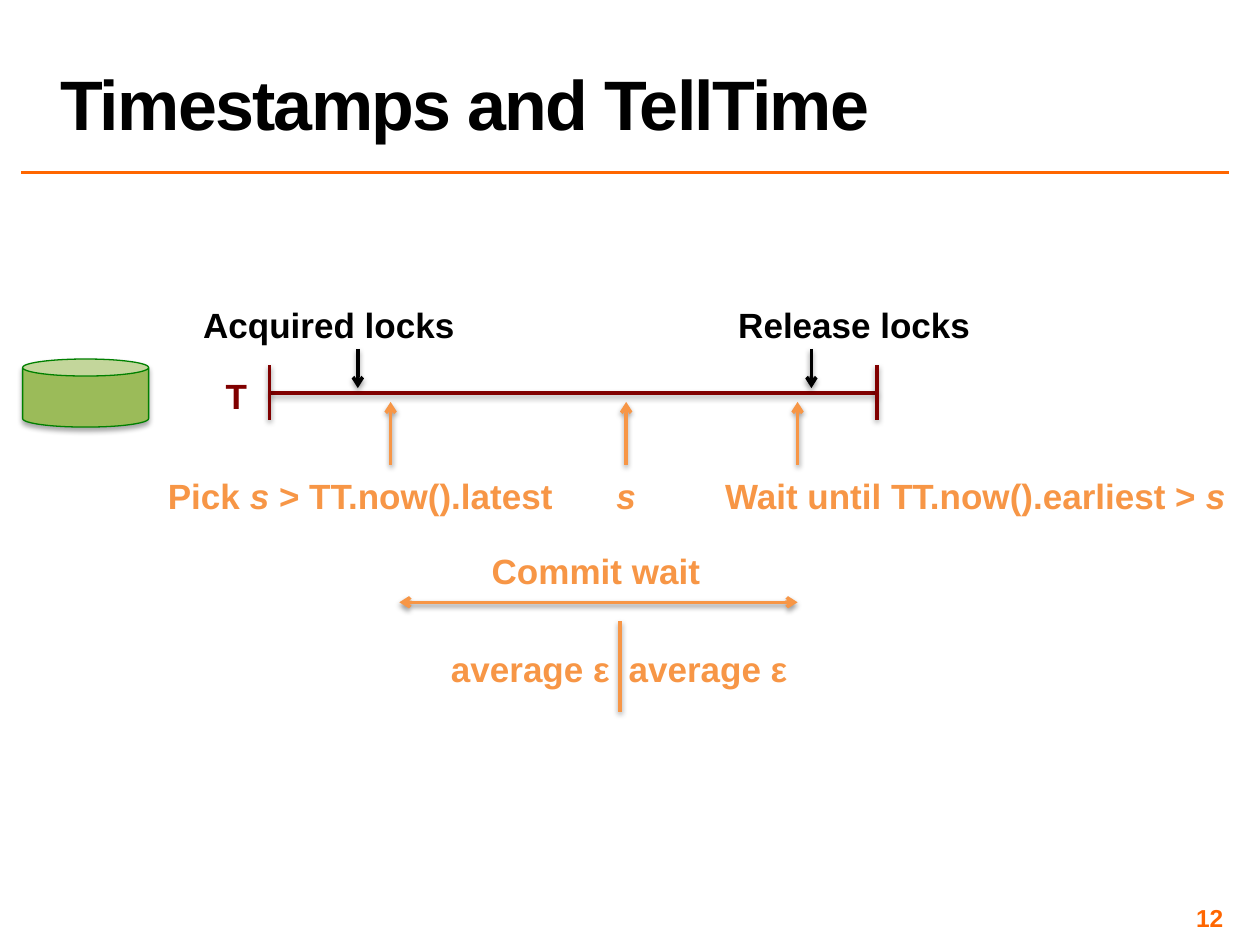
import pptx
import pptx.util
import pptx.oxml
import pptx.oxml.ns
from pptx.dml.color import RGBColor
from pptx.enum.shapes import MSO_CONNECTOR, MSO_SHAPE
from pptx.enum.text import MSO_ANCHOR, PP_ALIGN

BLACK = RGBColor(0x00, 0x00, 0x00)
MAROON = RGBColor(0x80, 0x00, 0x00)
ORANGE = RGBColor(0xF7, 0x96, 0x46)
ACCENT = RGBColor(0xFF, 0x66, 0x00)
LEAF = RGBColor(0x9B, 0xBB, 0x59)
GREEN = RGBColor(0x00, 0x80, 0x00)

COLS, ROWS = 100, 75
LABEL_HEIGHT = 4.4


class Deck:
    """Style and current slide; lengths are columns and rows of the grid."""
    font = "Arial"

    def __init__(self):
        self.prs = pptx.Presentation()
        self.prs.slide_width = pptx.util.Inches(10)
        self.prs.slide_height = pptx.util.Inches(7.5)
        self.slide = self.prs.slides.add_slide(self.prs.slide_layouts[6])

    def x(self, cols):
        return round(self.prs.slide_width * cols / COLS)

    def y(self, rows):
        return round(self.prs.slide_height * rows / ROWS)

    def box(self, left, top, width, height):
        return self.x(left), self.y(top), self.x(width), self.y(height)

    def effects(self, sp, alpha=0, distance=1.6):
        """Replace the theme shadow by a soft one below, or none at alpha 0."""
        lst = pptx.oxml.parse_xml(f'<a:effectLst {pptx.oxml.ns.nsdecls("a")}/>')
        if alpha:
            lst.append(pptx.oxml.parse_xml(
                f'<a:outerShdw {pptx.oxml.ns.nsdecls("a")} blurRad="{pptx.util.Pt(3.1)}" '
                f'dist="{pptx.util.Pt(distance)}" dir="5400000" rotWithShape="0">'
                f'<a:srgbClr val="000000"><a:alpha val="{alpha * 1000}"/></a:srgbClr>'
                '</a:outerShdw>'))
        sp._element.spPr.append(lst)

    def line(self, x1, y1, x2, y2, color, heads=(), alpha=38):
        """Draw a line; heads names the ends with arrows, headEnd first."""
        sp = self.slide.shapes.add_connector(
            MSO_CONNECTOR.STRAIGHT, self.x(x1), self.y(y1), self.x(x2), self.y(y2))
        sp.line.color.rgb = color
        sp.line.width = pptx.util.Pt(2)
        for end in heads:
            sp.line._get_or_add_ln().append(pptx.oxml.parse_xml(
                f'<a:{end} {pptx.oxml.ns.nsdecls("a")} type="arrow"/>'))
        self.effects(sp, alpha)

    def arrow(self, x, start, end, color):
        self.line(x, start, x, end, color, ["tailEnd"])

    def text(self, box, runs, color, size=20, align=PP_ALIGN.CENTER,
             anchor=MSO_ANCHOR.TOP, wrap=True):
        """Runs are (words, italic) pairs."""
        tf = self.slide.shapes.add_textbox(*self.box(*box)).text_frame
        tf.word_wrap = wrap
        tf.vertical_anchor = anchor
        p = tf.paragraphs[0]
        p.alignment = align
        for words, italic in runs:
            r = p.add_run()
            r.text = words
            r.font.name = self.font
            r.font.size = pptx.util.Pt(size)
            r.font.bold = True
            r.font.italic = italic
            r.font.color.rgb = color
        return tf

    def label(self, center, top, width, color, *runs):
        self.text((center - width / 2, top, width, LABEL_HEIGHT), runs, color, wrap=False)

    def title(self, words):
        tf = self.text((3.8, 0.2, 93.7, 11.7), [(words, False)], BLACK, 40,
                       PP_ALIGN.LEFT, MSO_ANCHOR.BOTTOM)
        p = tf.paragraphs[0]
        p.line_spacing = 0.8
        p.runs[0].font._element.set("spc", "-100")
        self.line(1.7, 13.7, 97.5, 13.7, ACCENT, alpha=0)

    def page_number(self, number):
        tf = self.text((74.2, 71.7, 23.3, 2.3), [(str(number), False)], ACCENT, 14,
                       PP_ALIGN.RIGHT, MSO_ANCHOR.MIDDLE)
        tf.margin_left = tf.margin_right = pptx.util.Inches(0.04)
        tf.margin_top = tf.margin_bottom = pptx.util.Inches(0.04)

    def database(self, *box):
        sp = self.slide.shapes.add_shape(MSO_SHAPE.CAN, *self.box(*box))
        sp.fill.solid()
        sp.fill.fore_color.rgb = LEAF
        sp.line.color.rgb = GREEN
        sp.line.width = pptx.util.Pt(0.75)
        self.effects(sp, 35, 1.8)


def main():
    deck = Deck()
    deck.title("Timestamps and TellTime")

    # Transaction bar with its end marks
    axis, start, end = 31.2, 21.4, 69.6
    deck.line(start, axis, end, axis, MAROON)
    for x in (start, end):
        deck.line(x, 29, x, 33.3, MAROON)
    deck.text((16.5, 29.2, 4.5, LABEL_HEIGHT), [("T", False)], MAROON)
    deck.database(1.8, 28.5, 10, 5.4)

    # Lock events above the bar
    for words, center, width, x in (("Acquired locks", 26.1, 22.1, 28.4),
                                    ("Release locks", 67.8, 20.6, 64.4)):
        deck.label(center, 23.6, width, BLACK, (words, False))
        deck.arrow(x, 27.7, 30.8, BLACK)

    # Timestamp events below the bar
    pick, stamp, wait = 31, 49.7, 63.3
    for x in (pick, stamp, wait):
        deck.arrow(x, 36.9, 31.9, ORANGE)
    deck.label(28.6, 37.2, 32.7, ORANGE,
               ("Pick ", False), ("s ", True), ("> TT.now().latest", False))
    deck.label(stamp, 37.2, 3.6, ORANGE, ("s", True))
    deck.label(77.4, 37.2, 41.9, ORANGE,
               ("Wait until TT.now().earliest > ", False), ("s", True))

    # Commit wait and its two halves
    deck.label(47.3, 43.1, 18.7, ORANGE, ("Commit wait", False))
    deck.line(31.7, 47.8, wait, 47.8, ORANGE, ["headEnd", "tailEnd"])
    deck.line(49.2, 56.5, 49.2, 49.3, ORANGE)
    for center in (42.1, 56.2):
        deck.label(center, 50.9, 14.7, ORANGE, ("average ε", False))

    deck.page_number(12)
    deck.prs.save("out.pptx")


if __name__ == "__main__":
    main()
